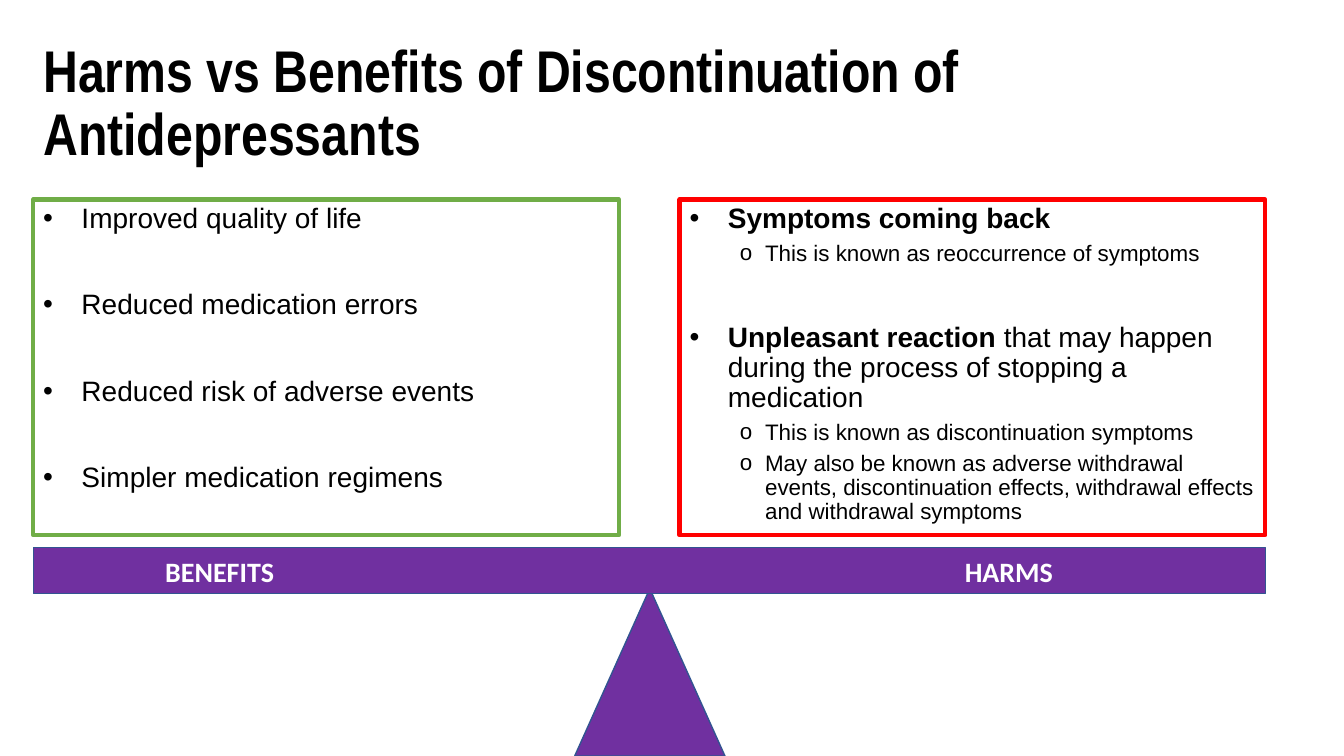
from lxml import etree
from pptx import Presentation
from pptx import util as u
from pptx.dml.color import RGBColor
from pptx.enum import shapes, text
from pptx.oxml.ns import qn

COLORS = {
    "text": "000000",
    "label": "FFFFFF",
    "benefits": "70AD47",
    "harms": "FF0000",
    "scale": "7030A0",
    "edge": "325491",
}
LEFT, BEAM_WIDTH, BOX_WIDTH = 0.33, 12.22, 5.81
BOX_TOP, BOX_HEIGHT = 1.98, 3.33
RIGHT = LEFT + BEAM_WIDTH - BOX_WIDTH
LEVELS = [
    {"bullet": "•", "margin": 0.38, "hanging": 0.38, "size": 20},
    {"bullet": "o", "margin": 0.75, "hanging": 0.25, "size": 16},
]


def set_font(paragraph, name, size, color, bold=None):
    paragraph.font.name = name
    paragraph.font.size = u.Pt(size)
    paragraph.font.color.rgb = RGBColor.from_string(COLORS[color])
    paragraph.font.bold = bold


def add_block(kind, left, top, width, height, fill, line, line_width):
    shape = slide.shapes.add_shape(
        kind, u.Inches(left), u.Inches(top), u.Inches(width), u.Inches(height))
    shape.shadow.inherit = False
    if fill:
        shape.fill.solid()
        shape.fill.fore_color.rgb = RGBColor.from_string(COLORS[fill])
    else:
        shape.fill.background()
    shape.line.color.rgb = RGBColor.from_string(COLORS[line])
    shape.line.width = u.Pt(line_width)
    return shape


presentation = Presentation()
presentation.slide_width = u.Inches(13.33)
presentation.slide_height = u.Inches(7.5)
slide = presentation.slides.add_slide(presentation.slide_layouts[5])

title = slide.shapes.title
title.left, title.top = u.Inches(LEFT), u.Inches(0.36)
title.width, title.height = u.Inches(9.4), u.Inches(1.57)
title.text_frame.word_wrap = True
title.text_frame.auto_size = text.MSO_AUTO_SIZE.NONE
title.text_frame.vertical_anchor = text.MSO_ANCHOR.TOP
title.text_frame.text = "Harms vs Benefits of Discontinuation of Antidepressants"
paragraph = title.text_frame.paragraphs[0]
paragraph.alignment = text.PP_ALIGN.LEFT
paragraph.line_spacing = 0.9
set_font(paragraph, "Arial Narrow", 42, "text", True)

boxes = [
    (RIGHT, "harms", [
        (0, 0, "Symptoms coming back", ""),
        (1, 5, "", "This is known as reoccurrence of symptoms"),
        (0, 41, "Unpleasant reaction ",
         "that may happen during the process of stopping a medication"),
        (1, 5, "", "This is known as discontinuation symptoms"),
        (1, 5, "", "May also be known as adverse withdrawal events, "
                   "discontinuation effects, withdrawal effects and withdrawal symptoms"),
    ]),
    (LEFT, "benefits", [
        (0, 0, "", "Improved quality of life"),
        (0, 40, "", "Reduced medication errors"),
        (0, 40, "", "Reduced risk of adverse events"),
        (0, 40, "", "Simpler medication regimens"),
    ]),
]
for left, color, items in boxes:
    box = add_block(shapes.MSO_SHAPE.RECTANGLE, left, BOX_TOP, BOX_WIDTH, BOX_HEIGHT,
                    None, color, 3)
    frame = box.text_frame
    frame.word_wrap = True
    frame.vertical_anchor = text.MSO_ANCHOR.TOP
    for index, (level, space, strong, plain) in enumerate(items):
        paragraph = frame.add_paragraph() if index else frame.paragraphs[0]
        style = LEVELS[level]
        properties = paragraph._p.get_or_add_pPr()
        properties.set("marL", str(u.Inches(style["margin"])))
        properties.set("indent", str(-u.Inches(style["hanging"])))
        etree.SubElement(properties, qn("a:buFont"), typeface="Arial")
        etree.SubElement(properties, qn("a:buChar"), char=style["bullet"])
        paragraph.level = level
        paragraph.alignment = text.PP_ALIGN.LEFT
        paragraph.line_spacing = 0.9
        paragraph.space_before = u.Pt(space)
        set_font(paragraph, "Arial", style["size"], "text")
        for words, bold in ((strong, True), (plain, False)):
            if words:
                run = paragraph.add_run()
                run.text = words
                run.font.bold = bold

add_block(shapes.MSO_SHAPE.FLOWCHART_EXTRACT, 5.7, 5.84, 1.49, 1.66, "scale", "edge", 1)
add_block(shapes.MSO_SHAPE.RECTANGLE, LEFT, 5.43, BEAM_WIDTH, 0.46, "scale", "edge", 1)

for left, words in ((1.54, "BENEFITS"), (9.47, "HARMS")):
    label = slide.shapes.add_textbox(
        u.Inches(left), u.Inches(5.45), u.Inches(1.68), u.Inches(0.44))
    label.text_frame.word_wrap = True
    label.text_frame.text = words
    set_font(label.text_frame.paragraphs[0], "Calibri", 20, "label", True)

presentation.save("out.pptx")
